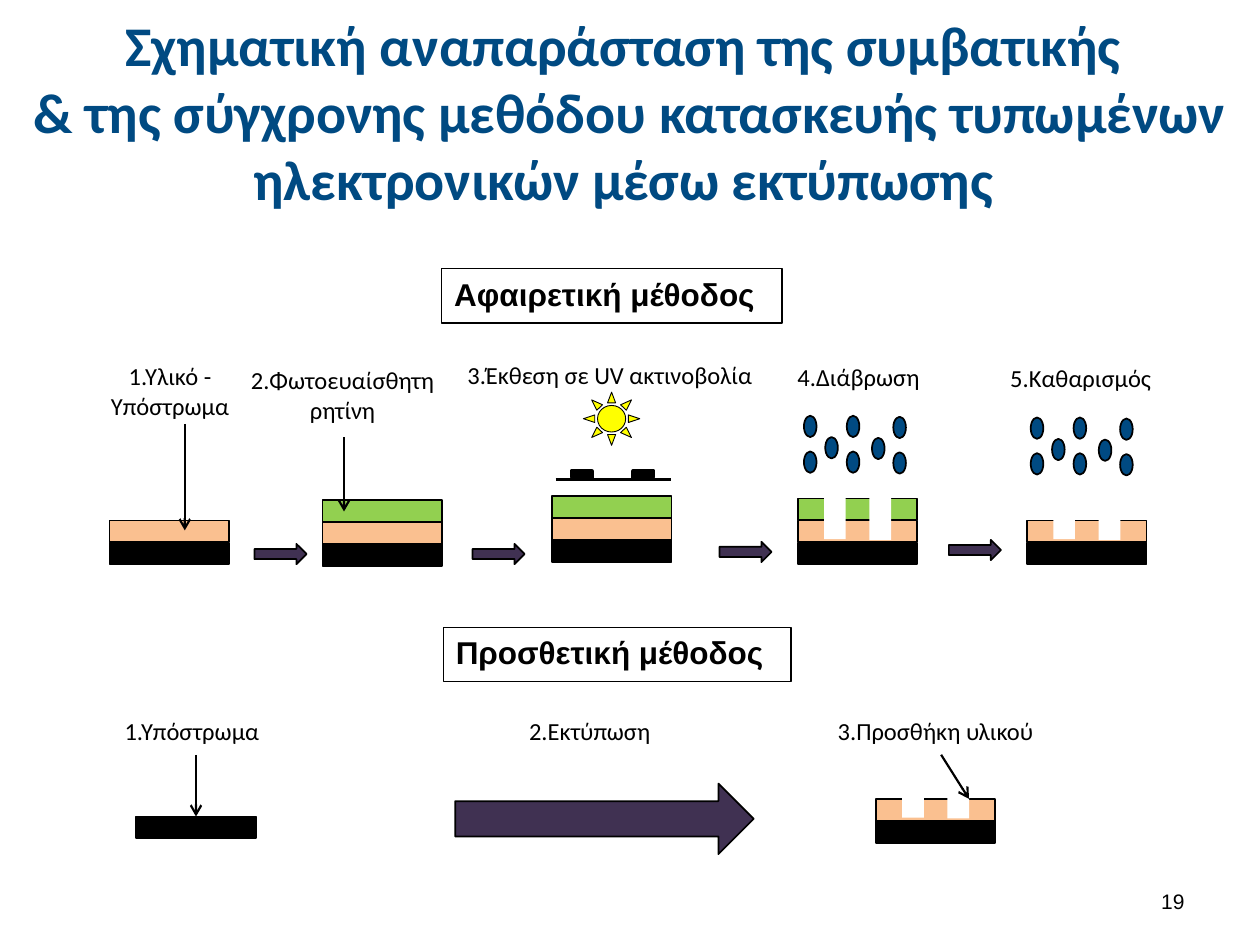
from dataclasses import dataclass

from lxml import etree
from pptx import Presentation
from pptx import util as u
from pptx.dml.color import RGBColor
from pptx.enum import shapes, text
from pptx.oxml import ns

BLACK = RGBColor(0x00, 0x00, 0x00)
WHITE = RGBColor(0xFF, 0xFF, 0xFF)
NAVY = RGBColor(0x00, 0x4A, 0x82)
PEACH = RGBColor(0xFA, 0xC0, 0x90)
GREEN = RGBColor(0x92, 0xD0, 0x50)
PURPLE = RGBColor(0x40, 0x31, 0x52)
YELLOW = RGBColor(0xFF, 0xFF, 0x00)

FORM = shapes.MSO_SHAPE
ALIGN = text.PP_ALIGN
LAYER_WIDTH, LAYER_HEIGHT, LAYER_STEP = 68.4, 12.4, 12.6
GAP_OFFSETS = ((15.1, 0), (41, 0.5))
DROP_OFFSETS = ((0, 0), (0, 20.4), (12.2, 12.2), (24.5, 0),
                (24.5, 20.4), (38.9, 12.6), (51.1, 0.6), (51.1, 20.9))


@dataclass
class Label:
    words: str
    left: float
    top: float
    width: float
    height: float = 25.9
    wrap: bool = False
    align: ALIGN = ALIGN.LEFT
    size: float = 14
    font: str = "Calibri"
    bold: bool = False
    color: RGBColor = BLACK
    anchor: text.MSO_ANCHOR = text.MSO_ANCHOR.TOP
    framed: bool = False


@dataclass
class Stack:
    left: float
    base_top: float
    colors: tuple[RGBColor, ...]  # from the bottom layer up
    etched: bool = False


@dataclass
class Pointer:
    start: tuple[float, float]
    end: tuple[float, float]


def add_form(slide, kind, left, top, width, height, fill, line=1.0):
    form = slide.shapes.add_shape(kind, u.Pt(left), u.Pt(top), u.Pt(width), u.Pt(height))
    form.shadow.inherit = False
    form.fill.solid()
    form.fill.fore_color.rgb = fill
    if line:
        form.line.color.rgb = BLACK
        form.line.width = u.Pt(line)
    else:
        form.line.fill.background()
    return form


def add_label(slide, label: Label) -> None:
    box = slide.shapes.add_textbox(u.Pt(label.left), u.Pt(label.top),
                                   u.Pt(label.width), u.Pt(label.height))
    if label.framed:
        box.line.color.rgb = BLACK
        box.line.width = u.Pt(0.75)
    frame = box.text_frame
    frame.word_wrap = label.wrap
    frame.vertical_anchor = label.anchor
    paragraph = frame.paragraphs[0]
    paragraph.alignment = label.align
    for index, line in enumerate(label.words.split("\n")):
        if index:
            paragraph.add_line_break()
        run = paragraph.add_run()
        run.text = line
        run.font.name = label.font
        run.font.size = u.Pt(label.size)
        run.font.bold = label.bold
        run.font.color.rgb = label.color


def add_stack(slide, stack: Stack):
    """Draw the layers and any etched gaps; return the top layer."""
    for level, color in enumerate(stack.colors):
        layer = add_form(slide, FORM.RECTANGLE, stack.left,
                         stack.base_top - level * LAYER_STEP,
                         LAYER_WIDTH, LAYER_HEIGHT, color)
    if stack.etched:
        for dx, dy in GAP_OFFSETS:
            add_form(slide, FORM.RECTANGLE, stack.left + dx,
                     stack.base_top - 38 + dy, 12.4, 36, WHITE, line=0)
    return layer


def add_line(slide, pointer: Pointer, weight: float = 1.25, arrow: bool = True):
    line = slide.shapes.add_connector(shapes.MSO_CONNECTOR.STRAIGHT,
                                      *map(u.Pt, pointer.start + pointer.end))
    line.line.color.rgb = BLACK
    line.line.width = u.Pt(weight)
    if arrow:
        etree.SubElement(line.line._get_or_add_ln(), ns.qn("a:tailEnd"), type="arrow")
    etree.SubElement(line._element.spPr, ns.qn("a:effectLst"))
    return line


LABELS = (
    Label("Σχηματική αναπαράσταση της συμβατικής \n"
          "& της σύγχρονης μεθόδου κατασκευής τυπωμένων ηλεκτρονικών μέσω εκτύπωσης ",
          0, 9.4, 720, 108, wrap=True, align=ALIGN.CENTER, size=32, bold=True,
          color=NAVY, anchor=text.MSO_ANCHOR.MIDDLE),
    # Subtractive method
    Label("Αφαιρετική μέθοδος", 252.5, 153.6, 194.4, 31,
          size=18, font="Arial", bold=True, framed=True),
    Label("1.Υλικό - Υπόστρωμα", 50.4, 203, 93.6, 41, wrap=True, align=ALIGN.CENTER),
    Label("2.Φωτοευαίσθητη ρητίνη", 131, 205.2, 129.6, 44.6, wrap=True, align=ALIGN.CENTER),
    Label("3.Έκθεση σε UV ακτινοβολία", 260, 202.3, 184.3),
    Label("4.Διάβρωση", 448.6, 203.4, 93.6, wrap=True),
    Label("5.Καθαρισμός", 570.2, 203.8, 99.4),
    # Additive method
    Label("Προσθετική μέθοδος", 253.4, 358.4, 198.7, 31,
          size=18, font="Arial", bold=True, framed=True),
    Label("1.Υπόστρωμα", 64.1, 405.4, 95),
    Label("2.Εκτύπωση", 295.2, 405.4, 87.1),
    Label("3.Προσθήκη υλικού", 471.6, 405.4, 131.8),
    # Slide number
    Label("19", 516.2, 500.4, 167.8, 28.8, wrap=True, align=ALIGN.RIGHT,
          size=12, font="Arial", anchor=text.MSO_ANCHOR.MIDDLE),
)

STACKS = (
    Stack(62.6, 310.1, (BLACK, PEACH)),
    Stack(184.3, 311, (BLACK, PEACH, GREEN)),
    Stack(315.4, 308.7, (BLACK, PEACH, GREEN)),
    Stack(455.8, 310.1, (BLACK, PEACH, GREEN), etched=True),
    Stack(586.8, 310.1, (BLACK, PEACH), etched=True),
    Stack(500.4, 469.2, (BLACK, PEACH), etched=True),
)
PRINT_SUBSTRATE = Stack(77.8, 466.6, (BLACK,))

STEP_ARROWS = ((145.4, 310.8), (270, 310.8), (411.1, 309.6), (542.2, 308.5))
MASK_BLOCKS = (326.5, 361.8)
DROP_CLOUDS = ((459.4, 237.6), (589, 238.6))
POINTERS = (
    Pointer((105.6, 242.2), (105.6, 303.1)),
    Pointer((196.6, 249.8), (196.6, 292.3)),
    Pointer((537.8, 431.3), (553.7, 456.5)),
)


def main() -> None:
    prs = Presentation()
    prs.slide_width, prs.slide_height = u.Pt(720), u.Pt(540)
    slide = prs.slides.add_slide(prs.slide_layouts[6])

    for label in LABELS:
        add_label(slide, label)
    for stack in STACKS:
        add_stack(slide, stack)

    # Arrows between steps, and the printing arrow
    for left, top in STEP_ARROWS:
        add_form(slide, FORM.RIGHT_ARROW, left, top, 29.8, 11.6, PURPLE)
    add_form(slide, FORM.RIGHT_ARROW, 260.1, 447.8, 170.6, 40.3, PURPLE)

    # UV exposure: mask and light
    for left in MASK_BLOCKS:
        add_form(slide, FORM.RECTANGLE, left, 269.2, 11.8, 3.8, BLACK, line=2)
    add_line(slide, Pointer((317.5, 274.1), (383.6, 274.1)), weight=1.5, arrow=False)
    add_form(slide, FORM.SUN, 333.4, 224.1, 32.2, 30.4, YELLOW, line=0.5)

    # Etching and cleaning drops
    for left, top in DROP_CLOUDS:
        for dx, dy in DROP_OFFSETS:
            add_form(slide, FORM.OVAL, left + dx, top + dy, 7.2, 12.2, NAVY)

    # Pointers from labels to layers
    for pointer in POINTERS:
        add_line(slide, pointer)
    substrate = add_stack(slide, PRINT_SUBSTRATE)
    to_substrate = add_line(slide, Pointer((112, 431.3), (112, 466.6)))
    to_substrate.end_connect(substrate, 0)

    prs.save("out.pptx")


if __name__ == "__main__":
    main()
